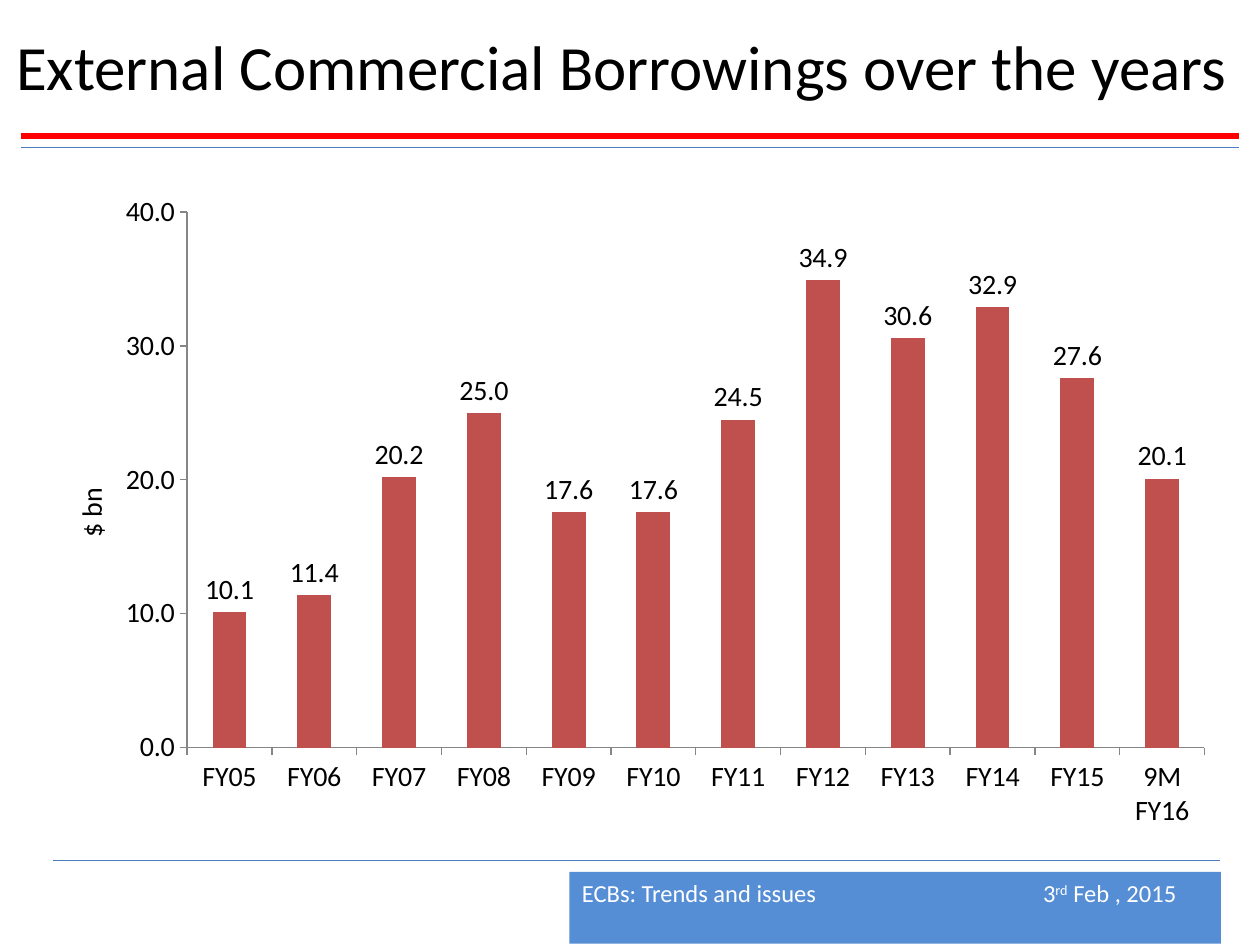
from lxml import etree
from pptx import Presentation
from pptx.chart.data import CategoryChartData
from pptx.dml.color import RGBColor
from pptx.enum import chart as ch, shapes, text
from pptx.oxml import parse_xml
from pptx.oxml.ns import nsdecls, qn
from pptx.util import Inches, Pt

FONT = "Calibri"
BORROWINGS = {
    "FY05": 10.1, "FY06": 11.4, "FY07": 20.2, "FY08": 25.0,
    "FY09": 17.6, "FY10": 17.6, "FY11": 24.5, "FY12": 34.9,
    "FY13": 30.6, "FY14": 32.9, "FY15": 27.6, "9M FY16": 20.1,
}


def color(hex_string):
    """Turn a hex string into a colour."""
    return RGBColor.from_string(hex_string)


def style_font(font, size, hex_string):
    """Set the typeface, size and colour of a font."""
    font.name = FONT
    font.size = Pt(size)
    font.bold = False
    font.color.rgb = color(hex_string)


def add_rule(slide, left, right, top, hex_string, width):
    """Draw a horizontal rule without a shadow."""
    rule = slide.shapes.add_connector(
        shapes.MSO_CONNECTOR.STRAIGHT,
        Inches(left), Inches(top), Inches(right), Inches(top))
    rule.line.color.rgb = color(hex_string)
    rule.line.width = Pt(width)
    etree.SubElement(rule._element.spPr, qn("a:effectLst"))


def add_title(slide, title):
    """Add the slide title."""
    box = slide.shapes.add_textbox(
        Inches(0.03), Inches(0.03), Inches(9.97), Inches(0.97))
    box.line.color.rgb = color("FFFFFF")
    box.line.width = Pt(0.75)
    frame = box.text_frame
    frame.word_wrap = True
    frame.vertical_anchor = text.MSO_ANCHOR.MIDDLE
    paragraph = frame.paragraphs[0]
    paragraph.text = title
    style_font(paragraph.font, 36, "000000")


def add_footer(slide, topic, day, suffix, month):
    """Add the footer bar with the topic and the date at a tab stop."""
    bar = slide.shapes.add_shape(
        shapes.MSO_SHAPE.RECTANGLE,
        Inches(4.52), Inches(6.92), Inches(5.17), Inches(0.57))
    bar.shadow.inherit = False
    bar.fill.solid()
    bar.fill.fore_color.rgb = color("558ED5")
    bar.line.fill.background()
    frame = bar.text_frame
    frame.word_wrap = True
    frame.vertical_anchor = text.MSO_ANCHOR.TOP
    paragraph = frame.paragraphs[0]
    paragraph.alignment = text.PP_ALIGN.LEFT
    tabs = etree.SubElement(paragraph._p.get_or_add_pPr(), qn("a:tabLst"))
    etree.SubElement(tabs, qn("a:tab"), pos=str(Inches(3.66)), algn="l")
    for words in (f"{topic}\t{day}", suffix, month):
        run = paragraph.add_run()
        run.text = words
        if words == suffix:
            run._r.get_or_add_rPr().set("baseline", "30000")
    style_font(paragraph.font, 14, "FFFFFF")


def set_layout(element, index, **settings):
    """Place a chart part by fractions of the chart area."""
    for layout in element.findall(qn("c:layout")):
        element.remove(layout)
    values = "".join(f'<c:{name} val="{value}"/>' for name, value in settings.items())
    element.insert(index, parse_xml(
        f'<c:layout {nsdecls("c")}><c:manualLayout>{values}'
        '</c:manualLayout></c:layout>'))


def style_axis(axis):
    """Give an axis outside ticks, a grey line and no gridlines."""
    axis.has_major_gridlines = False
    axis.major_tick_mark = ch.XL_TICK_MARK.OUTSIDE
    axis.minor_tick_mark = ch.XL_TICK_MARK.NONE
    axis.format.line.color.rgb = color("868686")
    axis.format.line.width = Pt(0.75)
    style_font(axis.tick_labels.font, 16, "000000")


def style_value_axis(axis):
    """Scale and title the value axis."""
    axis.minimum_scale = 0
    axis.maximum_scale = 40
    axis.major_unit = 10
    axis.tick_labels.number_format = "0.0"
    axis.tick_labels.number_format_is_linked = False
    paragraph = axis.axis_title.text_frame.paragraphs[0]
    paragraph.text = "$ bn"
    style_font(paragraph.font, 16, "000000")
    set_layout(axis.axis_title._element, 1,
               xMode="edge", yMode="edge", x=0.03, y=0.46)


def add_borrowings_chart(slide):
    """Add the column chart of yearly borrowings."""
    data = CategoryChartData(number_format="0.0")
    data.categories = list(BORROWINGS)
    data.add_series("Series 1", list(BORROWINGS.values()))
    chart = slide.shapes.add_chart(
        ch.XL_CHART_TYPE.COLUMN_CLUSTERED,
        Inches(0.25), Inches(1.42), Inches(9.5), Inches(5.25), data).chart
    chart.has_title = False
    chart.has_legend = False
    style_font(chart.font, 16, "000000")
    style_axis(chart.category_axis)
    style_axis(chart.value_axis)
    style_value_axis(chart.value_axis)
    plot = chart.plots[0]
    plot.gap_width = 150
    plot.vary_by_categories = False
    plot.has_data_labels = True
    labels = plot.data_labels
    labels.show_value = True
    labels.number_format = "0.0"
    labels.number_format_is_linked = False
    labels.position = ch.XL_LABEL_POSITION.OUTSIDE_END
    style_font(labels.font, 16, "000000")
    fill = plot.series[0].format.fill
    fill.solid()
    fill.fore_color.rgb = color("C0504D")
    set_layout(chart._chartSpace.chart.plotArea, 0,
               layoutTarget="inner", xMode="edge", yMode="edge",
               x=0.13, y=0.05, w=0.85, h=0.81)


def main():
    """Build and save the slide."""
    presentation = Presentation()
    presentation.slide_width = Inches(10)
    presentation.slide_height = Inches(7.5)
    slide = presentation.slides.add_slide(presentation.slide_layouts[6])
    add_rule(slide, 0.17, 9.83, 1.08, "FF0000", 3)
    add_rule(slide, 0.17, 9.83, 1.17, "4B7EBC", 0.75)
    add_footer(slide, "ECBs: Trends and issues", "3", "rd", " Feb , 2015")
    add_rule(slide, 0.42, 9.68, 6.83, "4B7EBC", 0.75)
    add_title(slide, "External Commercial Borrowings over the years")
    add_borrowings_chart(slide)
    presentation.save("out.pptx")


if __name__ == "__main__":
    main()
